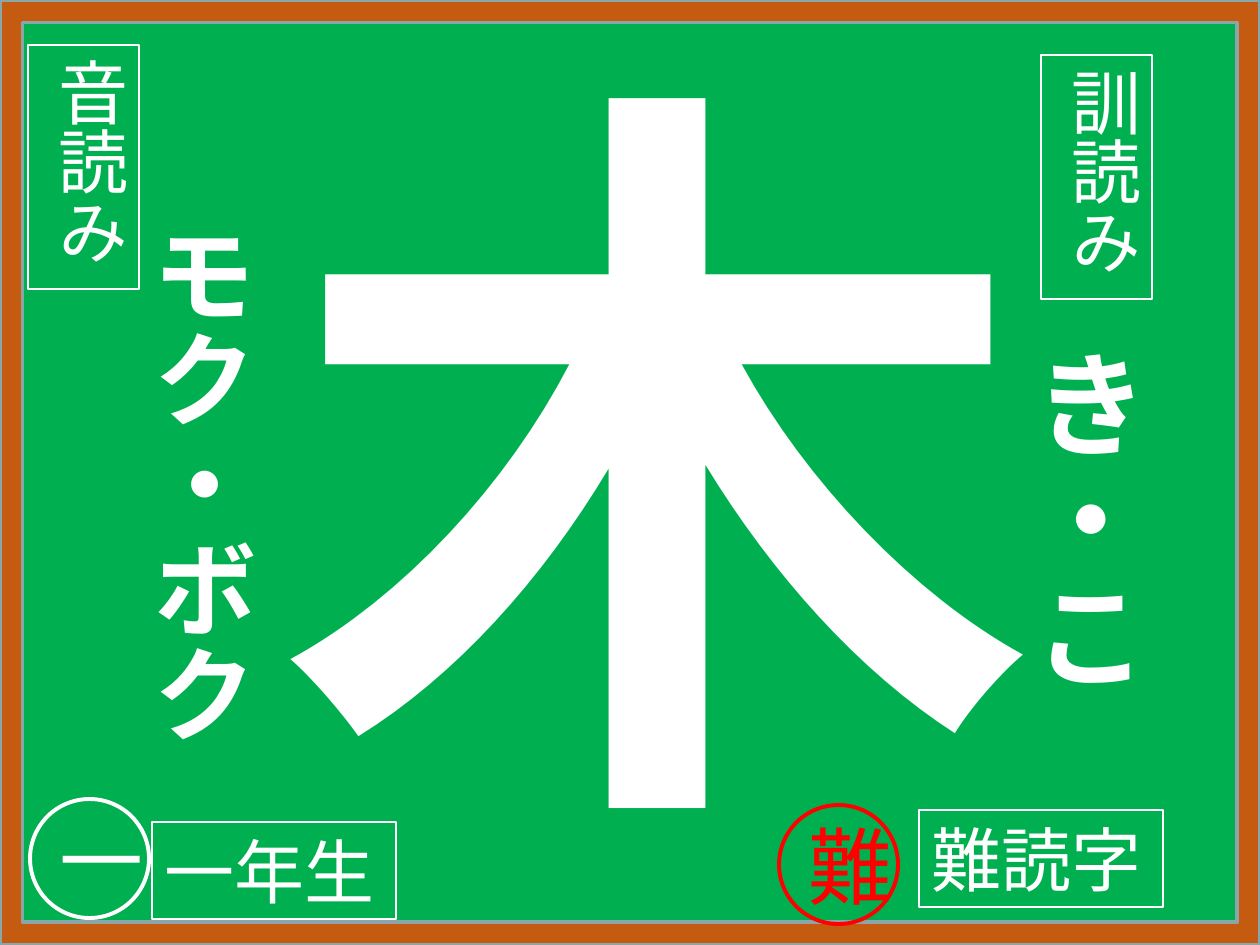
from lxml import etree
from pptx import Presentation
from pptx.dml.color import RGBColor
from pptx.enum.lang import MSO_LANGUAGE_ID
from pptx.enum.shapes import MSO_SHAPE
from pptx.enum.text import MSO_ANCHOR, MSO_AUTO_SIZE, PP_ALIGN
from pptx.oxml.ns import qn
from pptx.util import Emu, Pt

FRAME, RECT, OVAL = MSO_SHAPE.FRAME, MSO_SHAPE.RECTANGLE, MSO_SHAPE.OVAL
TOP, MIDDLE = MSO_ANCHOR.TOP, MSO_ANCHOR.MIDDLE
LEFT, CENTER = PP_ALIGN.LEFT, PP_ALIGN.CENTER
GROW, FIXED = MSO_AUTO_SIZE.SHAPE_TO_FIT_TEXT, MSO_AUTO_SIZE.NONE
JAPANESE = MSO_LANGUAGE_ID.JAPANESE

FONT = "Noto Sans CJK JP"
WHITE, RED, GREEN, WOOD, EDGE = "FFFFFF", "FF0000", "00B050", "C55A11", "8AA6A8"
TITLE_ONLY = 5
WIDTH, HEIGHT = 1260, 945
LABEL_LONG, LABEL_TALL, LABEL_WIDE = 244, 111, 97
CIRCLE = 119


def px(n):
    return Emu(round(n * 914400 / 126))


def rgb(color):
    return RGBColor.from_string(color)


def write(sp, text, size, color=WHITE, bold=False, align=LEFT,
          vertical=False, **frame):
    """Fill the shape with one line; frame holds text frame attributes."""
    tf = sp.text_frame
    for name, value in frame.items():
        setattr(tf, name, value)
    if vertical:
        tf._txBody.bodyPr.set("vert", "eaVert")
    p = tf.paragraphs[0]
    p.alignment = align
    r = p.add_run()
    r.text = text
    font_format = {"size": Pt(size), "bold": bold, "name": FONT,
                   "language_id": JAPANESE}
    for name, value in font_format.items():
        setattr(r.font, name, value)
    r.font.color.rgb = rgb(color)
    rPr = r._r.get_or_add_rPr()
    rPr.find(qn("a:latin")).addnext(
        etree.Element(qn("a:ea"), typeface=FONT))


def add_outline(slide, kind, box, color, width):
    sp = slide.shapes.add_shape(kind, *map(px, box))
    sp.shadow.inherit = False
    sp.fill.background()
    sp.line.color.rgb = rgb(color)
    sp.line.width = Pt(width)
    return sp


def add_board(slide):
    slide.background.fill.solid()
    slide.background.fill.fore_color.rgb = rgb(GREEN)
    sp = add_outline(slide, FRAME, (0, 0, WIDTH, HEIGHT), EDGE, 2)
    sp.adjustments[0] = 0.024
    sp.fill.solid()
    sp.fill.fore_color.rgb = rgb(WOOD)


def add_kanji(slide, text):
    sp = slide.shapes.title
    place = {"left": 228, "top": 69, "width": 804, "height": 790}
    for name, value in place.items():
        setattr(sp, name, px(value))
    write(sp, text, 432, bold=True, align=CENTER, vertical=True,
          auto_size=FIXED, vertical_anchor=MIDDLE)


def add_reading(slide, text, box, size, align):
    sp = slide.shapes.add_textbox(*map(px, box))
    write(sp, text, size, bold=True, align=align, vertical=True,
          auto_size=GROW, word_wrap=False)


def add_label(slide, text, x, y, vertical):
    size = (LABEL_TALL, LABEL_LONG) if vertical else (LABEL_LONG, LABEL_WIDE)
    sp = add_outline(slide, RECT, (x, y, *size), WHITE, 0.75)
    write(sp, text, 40, vertical=vertical, auto_size=GROW,
          word_wrap=True, vertical_anchor=TOP)


def add_mark(slide, text, x, y, color):
    sp = add_outline(slide, OVAL, (x, y, CIRCLE, CIRCLE), color, 2.25)
    write(sp, text, 48, color, align=CENTER, word_wrap=True,
          vertical_anchor=MIDDLE)


def main():
    prs = Presentation()
    prs.slide_width, prs.slide_height = px(WIDTH), px(HEIGHT)
    slide = prs.slides.add_slide(prs.slide_layouts[TITLE_ONLY])

    add_board(slide)
    add_kanji(slide, "木")
    add_reading(slide, "き・こ", (998, 334, 165, 357), 66, LEFT)
    add_reading(slide, "モク・ボク", (118, 210, 152, 533), 60, CENTER)
    for text, x, y, vertical in (
        ("訓読み", 1041, 55, True),
        ("音読み", 28, 45, True),
        ("一年生", 152, 822, False),
        ("難読字", 919, 810, False),
    ):
        add_label(slide, text, x, y, vertical)
    add_mark(slide, "一", 30, 799, WHITE)
    add_mark(slide, "難", 779, 805, RED)

    prs.save("out.pptx")


if __name__ == "__main__":
    main()
